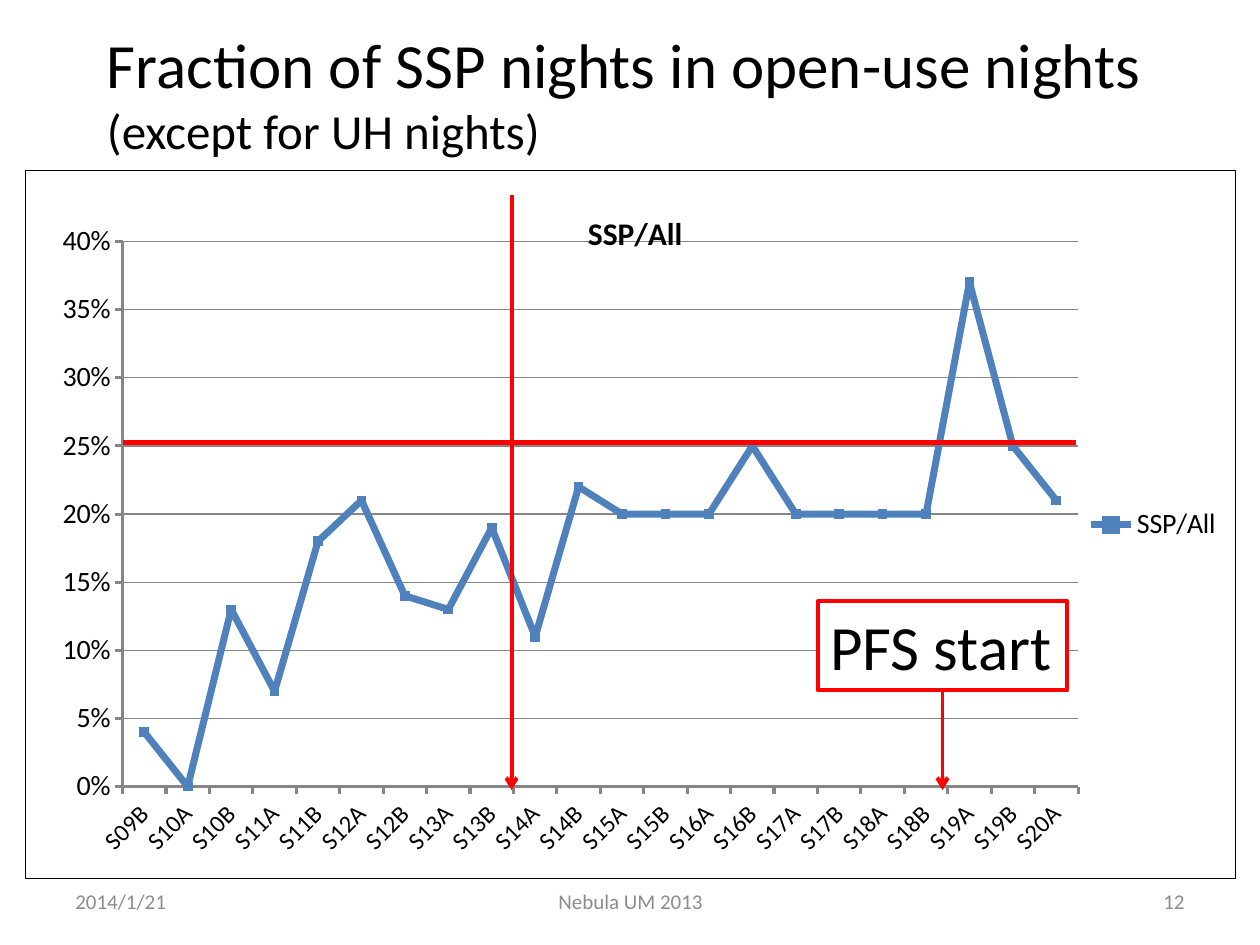
from collections import namedtuple
from dataclasses import dataclass

from lxml import etree
from pptx import Presentation
from pptx.chart.data import CategoryChartData
from pptx.dml.color import RGBColor
from pptx.enum.chart import XL_CHART_TYPE, XL_LEGEND_POSITION, XL_TICK_MARK
from pptx.enum.shapes import MSO_CONNECTOR, MSO_SHAPE
from pptx.enum.text import MSO_ANCHOR, MSO_AUTO_SIZE, PP_ALIGN
from pptx.oxml import parse_xml
from pptx.oxml.ns import nsdecls, qn
from pptx.util import Pt

LINE_CHART = XL_CHART_TYPE.LINE
LEGEND_RIGHT = XL_LEGEND_POSITION.RIGHT
TICK_OUT = XL_TICK_MARK.OUTSIDE
STRAIGHT = MSO_CONNECTOR.STRAIGHT
RECTANGLE = MSO_SHAPE.RECTANGLE
MIDDLE = MSO_ANCHOR.MIDDLE
GROW = MSO_AUTO_SIZE.SHAPE_TO_FIT_TEXT
LEFT, CENTER, RIGHT = PP_ALIGN.LEFT, PP_ALIGN.CENTER, PP_ALIGN.RIGHT
BOTTOM_SIDE = 2
EMU_PER_PX = 9144

Box = namedtuple("Box", "left top width height")


@dataclass(frozen=True)
class Theme:
    """Colours, font and type sizes of the deck."""
    font: str = "Calibri"
    ink: str = "000000"
    paper: str = "FFFFFF"
    accent: str = "FF0000"
    series: str = "4F81BD"
    axis: str = "868686"
    muted: str = "8C8C8C"
    heading: int = 36
    subheading: int = 28
    chart_title: int = 18
    label: int = 16
    category: int = 14
    footer: int = 12


THEME = Theme()
CATEGORIES = ["S09B"] + [f"S{year}{half}" for year in range(10, 20) for half in "AB"] + ["S20A"]
FRACTIONS = [0.04, 0, 0.13, 0.07, 0.18, 0.21, 0.14, 0.13, 0.19, 0.11, 0.22,
             0.2, 0.2, 0.2, 0.25, 0.2, 0.2, 0.2, 0.2, 0.37, 0.25, 0.21]


def px(*lengths):
    """Turn px lengths into EMU."""
    return [length * EMU_PER_PX for length in lengths]


def rgb(code):
    """Return the colour for a hex code."""
    return RGBColor.from_string(code)


def style_line(line, color, width):
    """Set the colour and the width in points of a line."""
    line.color.rgb = rgb(color)
    line.width = Pt(width)


def style_font(font, size, color=THEME.ink, bold=False):
    """Set the deck font with a size and a colour."""
    font.name, font.size, font.bold = THEME.font, Pt(size), bold
    font.color.rgb = rgb(color)


def add_span(para, text, size, color=THEME.ink):
    """Add one styled run to a paragraph."""
    span = para.add_run()
    span.text = text
    style_font(span.font, size, color)


def add_rule(page, start, end, width, arrow=False):
    """Add an accent line, with an optional arrowhead at its end."""
    rule = page.shapes.add_connector(STRAIGHT, *px(*start, *end))
    style_line(rule.line, THEME.accent, width)
    properties = rule.element.spPr
    if arrow:
        etree.SubElement(properties.find(qn("a:ln")), qn("a:tailEnd"), type="arrow")
    etree.SubElement(properties, qn("a:effectLst"))
    return rule


def make_layout(**settings):
    """Build a manual chart layout from its settings."""
    parts = "".join(f'<c:{key} val="{value}"/>' for key, value in settings.items())
    return parse_xml(f'<c:layout {nsdecls("c")}><c:manualLayout>{parts}'
                     '</c:manualLayout></c:layout>')


def add_heading(page, box):
    """Place the heading and its subheading."""
    frame = page.shapes.add_textbox(*px(*box)).text_frame
    frame.word_wrap = False
    frame.auto_size = GROW
    add_span(frame.paragraphs[0], "Fraction of SSP nights in open-use nights", THEME.heading)
    add_span(frame.add_paragraph(), "(except for UH nights)", THEME.subheading)


def style_axis(axis, size):
    """Set the line, ticks and labels of an axis."""
    axis.major_tick_mark = TICK_OUT
    style_line(axis.format.line, THEME.axis, 1.75)
    style_font(axis.tick_labels.font, size)


def add_fraction_chart(page, box):
    """Place the bordered line chart of fractions by semester."""
    data = CategoryChartData(number_format="0%")
    data.categories = CATEGORIES
    data.add_series("SSP/All", FRACTIONS)
    chart = page.shapes.add_chart(LINE_CHART, *px(*box), data).chart
    style_font(chart.font, 10)

    chart.has_title = True
    title = chart.chart_title
    add_span(title.text_frame.paragraphs[0], "SSP/All", THEME.chart_title)
    title.text_frame.paragraphs[0].runs[0].font.bold = True
    title_element = chart.element.find(".//" + qn("c:title"))
    for layout in title_element.findall(qn("c:layout")):
        title_element.remove(layout)
    title_element.find(qn("c:tx")).addnext(
        make_layout(xMode="edge", yMode="edge", x=0.46, y=0.05))

    chart.has_legend = True
    chart.legend.position = LEGEND_RIGHT
    chart.legend.include_in_layout = False
    style_font(chart.legend.font, THEME.label)

    style_axis(chart.category_axis, THEME.category)
    labels = chart.category_axis.tick_labels.font
    labels.bold = False
    text = chart.element.find(".//" + qn("c:catAx")).find(qn("c:txPr"))
    text.find(qn("a:bodyPr")).set("rot", "-2700000")
    values = chart.value_axis
    style_axis(values, THEME.label)
    values.minimum_scale, values.maximum_scale, values.major_unit = 0, 0.4, 0.05
    values.tick_labels.number_format = "0%"
    values.tick_labels.number_format_is_linked = False
    values.has_major_gridlines = True
    style_line(values.major_gridlines.format.line, THEME.axis, 0.75)

    plot = chart.plots[0]
    plot.vary_by_categories = False
    series = plot.series[0]
    series.smooth = False
    series.marker.style = None
    style_line(series.format.line, THEME.series, 4)

    area = chart.element.find(".//" + qn("c:plotArea"))
    for layout in area.findall(qn("c:layout")):
        area.remove(layout)
    area.insert(0, make_layout(layoutTarget="inner", xMode="edge", yMode="edge",
                               x=0.08, y=0.1, w=0.79, h=0.77))
    chart.element.find(qn("c:chart")).addnext(parse_xml(
        f'<c:spPr {nsdecls("c", "a")}><a:ln w="{Pt(0.75)}"><a:solidFill>'
        f'<a:srgbClr val="{THEME.ink}"/></a:solidFill></a:ln></c:spPr>'))


def add_marks(page, box):
    """Place the threshold, the date arrow and the start label over the chart."""
    left, top = box.left, box.top
    base = top + 492
    add_rule(page, (left + 78, top + 216), (left + 834, top + 216), 3)
    add_rule(page, (left + 386, top + 20), (left + 386, base), 2.25, arrow=True)

    label = page.shapes.add_shape(RECTANGLE, *px(left + 629, top + 342, 198, 71))
    label.shadow.inherit = False
    label.fill.solid()
    label.fill.fore_color.rgb = rgb(THEME.paper)
    style_line(label.line, THEME.accent, 2.25)
    frame = label.text_frame
    frame.word_wrap = False
    frame.auto_size = GROW
    frame.paragraphs[0].alignment = LEFT
    add_span(frame.paragraphs[0], "PFS start", THEME.heading)
    middle = left + 728
    pointer = add_rule(page, (middle, top + 413), (middle, base), 2.25, arrow=True)
    pointer.begin_connect(label, BOTTOM_SIDE)


def add_footer(page, box):
    """Place the date, the meeting name and the page number."""
    parts = [("2014/1/21", 0, 233, LEFT),
             ("Nebula UM 2013", 292, 317, CENTER),
             ("12", box.width - 233, 233, RIGHT)]
    for text, offset, width, alignment in parts:
        place = px(box.left + offset, box.top, width, box.height)
        frame = page.shapes.add_textbox(*place).text_frame
        frame.word_wrap = True
        frame.vertical_anchor = MIDDLE
        frame.paragraphs[0].alignment = alignment
        add_span(frame.paragraphs[0], text, THEME.footer, THEME.muted)


def main():
    """Build the deck and save it."""
    deck = Presentation()
    deck.slide_width, deck.slide_height = px(1000, 750)
    page = deck.slides.add_slide(deck.slide_layouts[6])
    chart_box = Box(20, 135, 961, 563)
    add_fraction_chart(page, chart_box)
    add_marks(page, chart_box)
    add_heading(page, Box(75, 15, 848, 118))
    add_footer(page, Box(50, 695, 900, 40))
    deck.save("out.pptx")


if __name__ == "__main__":
    main()
